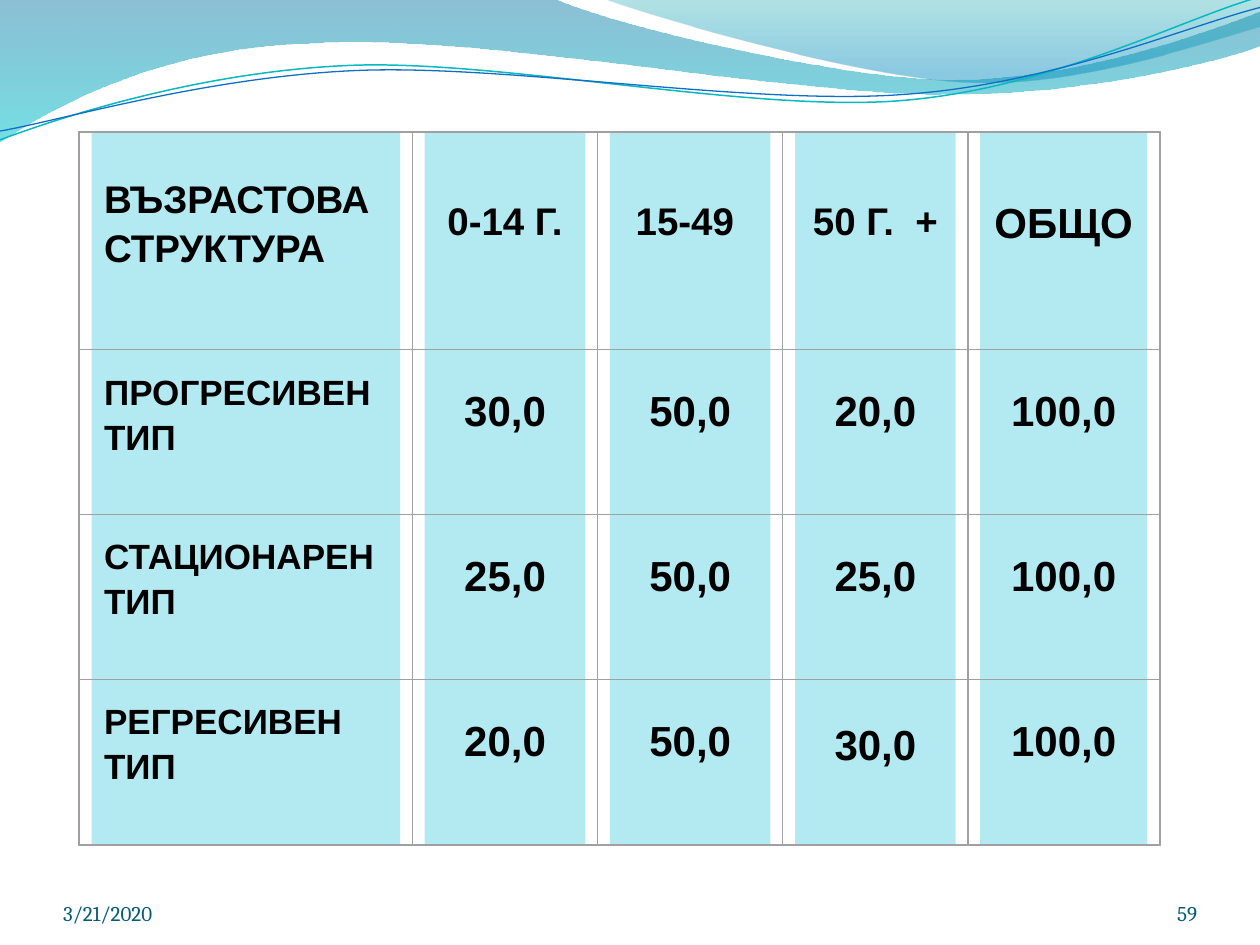
"""Builds the slide with the age structure grid for three population types."""
from math import cos, radians, sin

from lxml import etree
from pptx import Presentation, util as u
from pptx.dml.color import RGBColor
from pptx.enum import shapes, text
from pptx.oxml.ns import qn

Pt = u.Pt
color = RGBColor.from_string


def curve(holder, start, segments, closed=False, tilt=0, pivot=(0, 0)):
    """Draw flat tuples of points: two numbers make a line, six a cubic curve."""
    turn = radians(-tilt)
    nodes = [start] + [pair for s in segments for pair in zip(s[::2], s[1::2])]
    points = []
    for x, y in nodes:
        dx, dy = x - pivot[0], y - pivot[1]
        points.append((Pt(pivot[0] + dx * cos(turn) - dy * sin(turn)),
                       Pt(pivot[1] + dx * sin(turn) + dy * cos(turn))))
    builder = holder.build_freeform(*points[0], scale=1.0)
    builder.add_line_segments(points[1:], close=closed)
    shape = builder.convert_to_shape()
    shape.shadow.inherit = False
    shape.rotation = tilt
    steps = iter(list(shape._element.spPr.iter(qn("a:lnTo"))))
    for segment in segments:
        step = next(steps)
        if len(segment) == 6:
            step.tag = qn("a:cubicBezTo")
            for _ in range(2):
                extra = next(steps)
                step.append(extra[0])
                extra.getparent().remove(extra)
    return shape


def box(holder, x, y, width, height):
    """Add a plain rectangle without fill or line."""
    shape = holder.add_shape(shapes.MSO_SHAPE.RECTANGLE, Pt(x), Pt(y), Pt(width), Pt(height))
    shape.shadow.inherit = False
    shape.fill.background()
    shape.line.fill.background()
    return shape


prs = Presentation()
prs.slide_width, prs.slide_height = Pt(720), Pt(540)
slide = prs.slides.add_slide(prs.slide_layouts[6])

wide_wave = [
    (316.8, -0.7),
    (342.7, 12.2, 478.1, 45.4, 545.8, 45.4),
    (614.2, 45.4, 689.8, 18.7, 720, 6.5),
    (720.7, 25.9),
    (707.8, 31.7, 626.4, 54.7, 537.1, 54),
    (447.8, 54, 275, 20.2, 185, 24.5),
    (92.9, 25.9, 33.1, 59.8, -0.7, 81.4),
    (0, 0),
]
right_wave = [
    (366.5, 7.9, 491, 44.6, 553.7, 46.8),
    (616.3, 49.7, 691.9, 23, 720, 15.1),
    (720, 0),
    (344.9, -0.7),
]
for start, segments, stops in [
    ((0, 0), wide_wave, [(0, "0074A1", 45), (1, "00C6CF", 55)]),
    ((344.9, -0.7), right_wave, [(0, "00A1A9", 30), (0.8, "008BBF", 45)]),
]:
    wave = curve(slide.shapes, start, segments, closed=True)
    wave.line.fill.background()
    wave.fill.gradient()
    wave.fill.gradient_angle = 270
    for stop, (position, shade, _) in zip(wave.fill.gradient_stops, stops):
        stop.position = position
        stop.color.rgb = color(shade)
    for tint, (_, _, opacity) in zip(wave._element.spPr.iter(qn("a:srgbClr")), stops):
        etree.SubElement(tint, qn("a:alpha"), val=str(opacity * 1000))

teal_line = [
    (34.6, 67, 113.8, 41, 199.4, 37.4),
    (284.4, 33.8, 427, 64.1, 513.4, 57.6),
    (599.8, 51.1, 675.4, 10.8, 718.6, -1.4),
]
blue_line = [
    (33.8, 69.1, 118.1, 43.9, 203.8, 40.3),
    (290.2, 36.7, 429.8, 60.5, 516.2, 54),
    (601.9, 48.2, 677.5, 15.1, 720, 4.3),
]
ripples = slide.shapes.add_group_shape().shapes
for start, segments, pivot, shade, weight in [
    ((0, 79.9), teal_line, (359.3, 41.4), "0AB8BF", 0.85),
    ((0, 74.9), blue_line, (359.6, 42.5), "0F6FC6", 0.75),
]:
    ripple = curve(ripples, start, segments, tilt=-2.7, pivot=pivot)
    ripple.fill.background()
    ripple.line.color.rgb = color(shade)
    ripple.line.width = Pt(weight)

structure = [
    ["ВЪЗРАСТОВА СТРУКТУРА", "0-14 Г.", "15-49 ", "50 Г.  +", "ОБЩО"],
    ["ПРОГРЕСИВЕН ТИП", "30,0", "50,0", "20,0", "100,0"],
    ["СТАЦИОНАРЕН ТИП", "25,0", "50,0", "25,0", "100,0"],
    ["РЕГРЕСИВЕН ТИП", "20,0", "50,0", "30,0", "100,0"],
]
left, top, gutter = 45.4, 75.7, 7
widths = [190.3, 105.8, 105.8, 105.8, 109.4]
heights = [124.2, 94.2, 94.2, 94.2]
grid = slide.shapes.add_group_shape().shapes

for r, (entries, height) in enumerate(zip(structure, heights)):
    y = top + sum(heights[:r])
    for c, (entry, width) in enumerate(zip(entries, widths)):
        x = left + sum(widths[:c])
        is_total_head = (r, c) == (0, 4)
        size = 24 if is_total_head or (r and c) else 20 if r else 22
        lift = 20 if c == 0 or (r, c) == (3, 3) else size

        cell = box(grid, x + gutter, y, width - 2 * gutter, height)
        cell.fill.solid()
        cell.fill.fore_color.rgb = color("B3EAF2")
        frame = cell.text_frame
        frame.word_wrap = True
        frame.vertical_anchor = text.MSO_ANCHOR.MIDDLE
        frame.margin_left = frame.margin_right = Pt(7.2)
        frame.margin_top = Pt(3.6)
        frame.margin_bottom = Pt(1.15 * lift + (0 if is_total_head else 3.6))
        label = frame.paragraphs[0]
        label.text = entry
        label.alignment = text.PP_ALIGN.CENTER if c else text.PP_ALIGN.JUSTIFY
        label.line_spacing = 1.07
        label.font.name, label.font.size, label.font.bold = "Arial", Pt(size), True
        label.font.color.rgb = color("000000")

        border = box(grid, x, y, width, height)
        border.line.color.rgb = color("A0A0A0")
        border.line.width = Pt(0)

rim = box(grid, 45.2, 75.2, 617.6, 408)
rim.line.color.rgb = color("A0A0A0")
rim.line.width = Pt(0.87)

for x, width, words, alignment in [
    (36, 168, "3/21/2020", text.PP_ALIGN.LEFT),
    (624, 60, "59", text.PP_ALIGN.RIGHT),
]:
    frame = slide.shapes.add_textbox(Pt(x), Pt(500.5), Pt(width), Pt(28.75)).text_frame
    frame.word_wrap = True
    frame.margin_left = frame.margin_right = frame.margin_top = frame.margin_bottom = 0
    frame.vertical_anchor = text.MSO_ANCHOR.BOTTOM
    footer = frame.paragraphs[0]
    footer.text = words
    footer.alignment = alignment
    footer.font.name, footer.font.size = "Cambria", Pt(12)
    footer.font.color.rgb = color("045D75")

prs.save("out.pptx")
